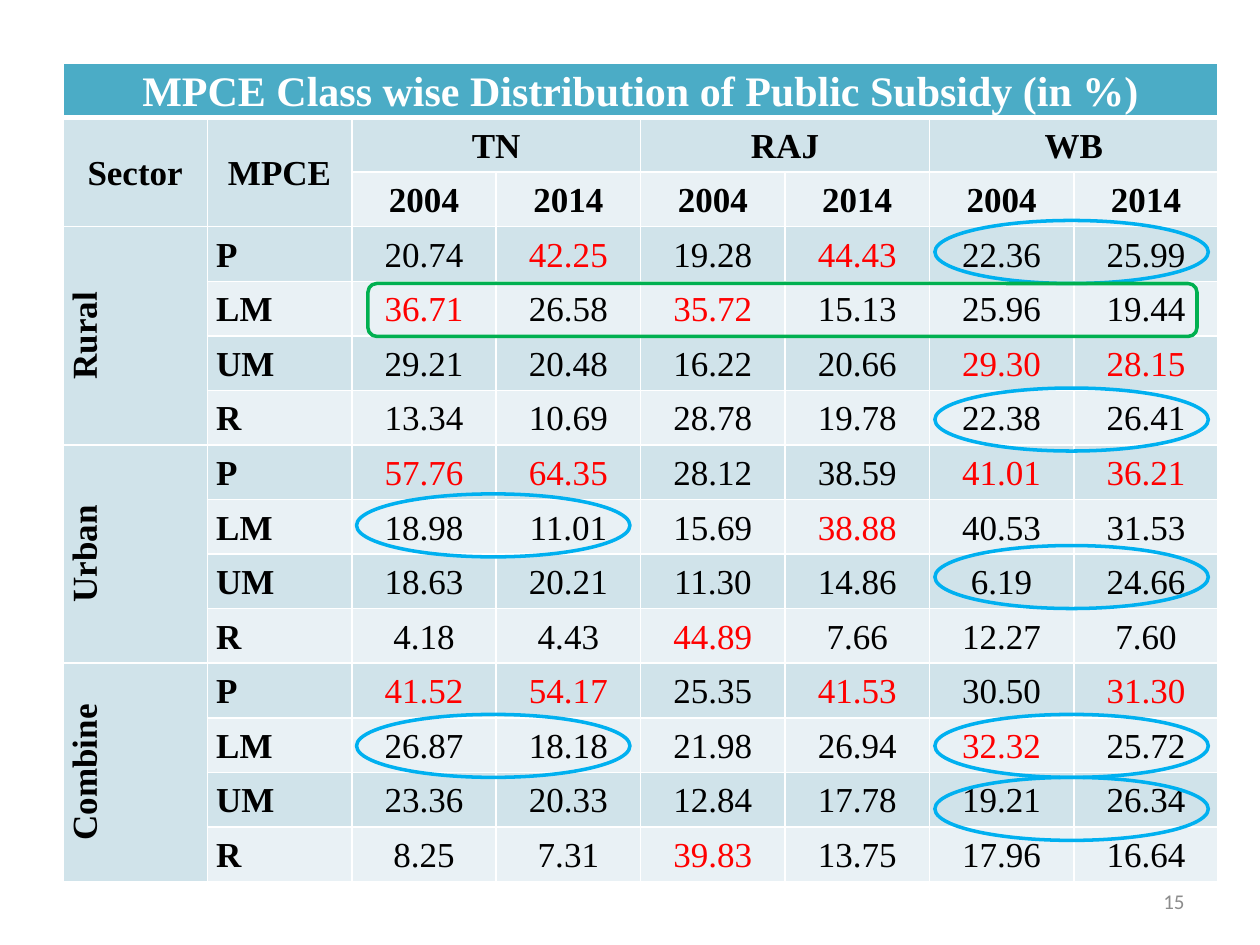
from lxml import etree
from pptx import Presentation
from pptx.dml.color import RGBColor
from pptx.enum.shapes import MSO_SHAPE
from pptx.enum.text import MSO_ANCHOR, PP_ALIGN
from pptx.oxml.ns import qn
from pptx.util import Inches, Pt

LEFT, CENTER, RIGHT = PP_ALIGN.LEFT, PP_ALIGN.CENTER, PP_ALIGN.RIGHT
MIDDLE = MSO_ANCHOR.MIDDLE
OVAL, ROUNDED = MSO_SHAPE.OVAL, MSO_SHAPE.ROUNDED_RECTANGLE
BLACK, WHITE, RED, GRAY = "000000", "FFFFFF", "FF0000", "8C8C8C"
TEAL, DARK_BAND, LIGHT_BAND = "4BACC6", "D0E3EA", "E9F1F5"
BLUE, GREEN = "00B0F0", "00B050"

TITLE = "MPCE Class wise Distribution of Public Subsidy (in %)"
STATES = ["TN", "RAJ", "WB"]
YEARS = ["2004", "2014"]
CLASSES = ["P", "LM", "UM", "R"]
HIGHLIGHT = "*"
SUBSIDY = {
    "Rural": [
        "20.74 42.25* 19.28 44.43* 22.36 25.99",
        "36.71* 26.58 35.72* 15.13 25.96 19.44",
        "29.21 20.48 16.22 20.66 29.30* 28.15*",
        "13.34 10.69 28.78 19.78 22.38 26.41",
    ],
    "Urban": [
        "57.76* 64.35* 28.12 38.59 41.01* 36.21*",
        "18.98 11.01 15.69 38.88* 40.53 31.53",
        "18.63 20.21 11.30 14.86 6.19 24.66",
        "4.18 4.43 44.89* 7.66 12.27 7.60",
    ],
    "Combine": [
        "41.52* 54.17* 25.35 41.53* 30.50 31.30*",
        "26.87 18.18 21.98 26.94 32.32* 25.72",
        "23.36 20.33 12.84 17.78 19.21 26.34",
        "8.25 7.31 39.83* 13.75 17.96 16.64",
    ],
}
TN_LEFT, WB_LEFT = 2.83, 7.42
CIRCLED = [(WB_LEFT, 1.75), (WB_LEFT, 3.08), (WB_LEFT, 4.33), (TN_LEFT, 3.92),
           (TN_LEFT, 5.67), (WB_LEFT, 5.67), (WB_LEFT, 6.17)]


def rgb(value):
    """Turn a hex string into a colour."""
    return RGBColor.from_string(value)


def write(frame, text, size=20, font="Times New Roman", color=BLACK, bold=False,
          align=CENTER, spacing=None):
    """Write one formatted paragraph into a text frame."""
    paragraph = frame.paragraphs[0]
    paragraph.alignment = align
    paragraph.line_spacing = spacing
    run = paragraph.add_run()
    run.text = text
    run.font.size = Pt(size)
    run.font.name = font
    run.font.bold = bold
    run.font.color.rgb = rgb(color)


def set_borders(cell, top=1, bottom=1):
    """Give a cell white borders, with widths in points."""
    properties = cell._tc.get_or_add_tcPr()
    widths = {"a:lnL": 1, "a:lnR": 1, "a:lnT": top, "a:lnB": bottom}
    for position, (tag, width) in enumerate(widths.items()):
        border = etree.Element(qn(tag), w=str(Pt(width)))
        fill = etree.SubElement(border, qn("a:solidFill"))
        etree.SubElement(fill, qn("a:srgbClr"), val=WHITE)
        properties.insert(position, border)


def fill_cell(cell, text, **text_format):
    """Write text into a table cell."""
    write(cell.text_frame, text, spacing=1.07, **text_format)


def style_grid(table):
    """Set fill, margins and borders of every cell."""
    for row_index, row in enumerate(table.rows):
        band = DARK_BAND if row_index % 2 else LIGHT_BAND
        for column, cell in enumerate(row.cells):
            cell.vertical_anchor = MIDDLE
            cell.margin_left = cell.margin_right = Inches(0.07)
            cell.margin_top = cell.margin_bottom = 0
            cell.fill.solid()
            sector_cell = column == 0 and row_index > 0
            cell.fill.fore_color.rgb = rgb(
                TEAL if row_index == 0 else DARK_BAND if sector_cell else band)
            set_borders(cell, top=3 if row_index == 1 else 1,
                        bottom=3 if row_index == 0 else 1)


def add_headings(table):
    """Fill the title row and the two heading rows."""
    title = table.cell(0, 0)
    title.merge(table.cell(0, 7))
    fill_cell(title, TITLE, size=24, color=WHITE, bold=True)
    for column, label in enumerate(["Sector", "MPCE"]):
        table.cell(1, column).merge(table.cell(2, column))
        fill_cell(table.cell(1, column), label, bold=True)
    for index, state in enumerate(STATES):
        first = 2 + index * len(YEARS)
        table.cell(1, first).merge(table.cell(1, first + 1))
        fill_cell(table.cell(1, first), state, bold=True)
        for offset, year in enumerate(YEARS):
            fill_cell(table.cell(2, first + offset), year, bold=True)


def add_sector(table, first_row, sector, lines):
    """Fill the rows of one sector."""
    label = table.cell(first_row, 0)
    label.merge(table.cell(first_row + len(CLASSES) - 1, 0))
    label._tc.get_or_add_tcPr().set("vert", "vert270")
    fill_cell(label, sector, bold=True)
    for row, (class_name, line) in enumerate(zip(CLASSES, lines), first_row):
        fill_cell(table.cell(row, 1), class_name, bold=True, align=LEFT)
        for column, value in enumerate(line.split(), 2):
            color = RED if value.endswith(HIGHLIGHT) else BLACK
            fill_cell(table.cell(row, column), value.rstrip(HIGHLIGHT), color=color)


def add_subsidy_table(slide, left, top, width, height):
    """Place the subsidy table in the given box."""
    rows = 3 + len(SUBSIDY) * len(CLASSES)
    columns = 2 + len(STATES) * len(YEARS)
    table = slide.shapes.add_table(rows, columns, left, top, width, height).table
    style_grid(table)
    add_headings(table)
    for index, (sector, lines) in enumerate(SUBSIDY.items()):
        add_sector(table, 3 + index * len(CLASSES), sector, lines)


def add_outline(slide, kind, color, left, top, width, height):
    """Place an unfilled outline around some values."""
    outline = slide.shapes.add_shape(kind, left, top, width, height)
    outline.shadow.inherit = False
    outline.fill.background()
    outline.line.color.rgb = rgb(color)
    outline.line.width = Pt(2)


def add_page_number(slide, left, top, width, height):
    """Place the page number in the given box."""
    frame = slide.shapes.add_textbox(left, top, width, height).text_frame
    frame.word_wrap = True
    frame.vertical_anchor = MIDDLE
    write(frame, "15", size=12, font="Calibri", color=GRAY, align=RIGHT)


def main():
    """Build and save the slide."""
    deck = Presentation()
    deck.slide_width, deck.slide_height = Inches(10), Inches(7.5)
    slide = deck.slides.add_slide(deck.slide_layouts[6])
    add_subsidy_table(slide, Inches(0.5), Inches(0.5), Inches(9.17), Inches(6.5))
    add_page_number(slide, Inches(7.17), Inches(6.95), Inches(2.33), Inches(0.4))
    for left, top in CIRCLED:
        add_outline(slide, OVAL, BLUE, Inches(left), Inches(top),
                    Inches(2.17), Inches(0.5))
    add_outline(slide, ROUNDED, GREEN, Inches(2.92), Inches(2.25),
                Inches(6.58), Inches(0.42))
    deck.save("out.pptx")


if __name__ == "__main__":
    main()
